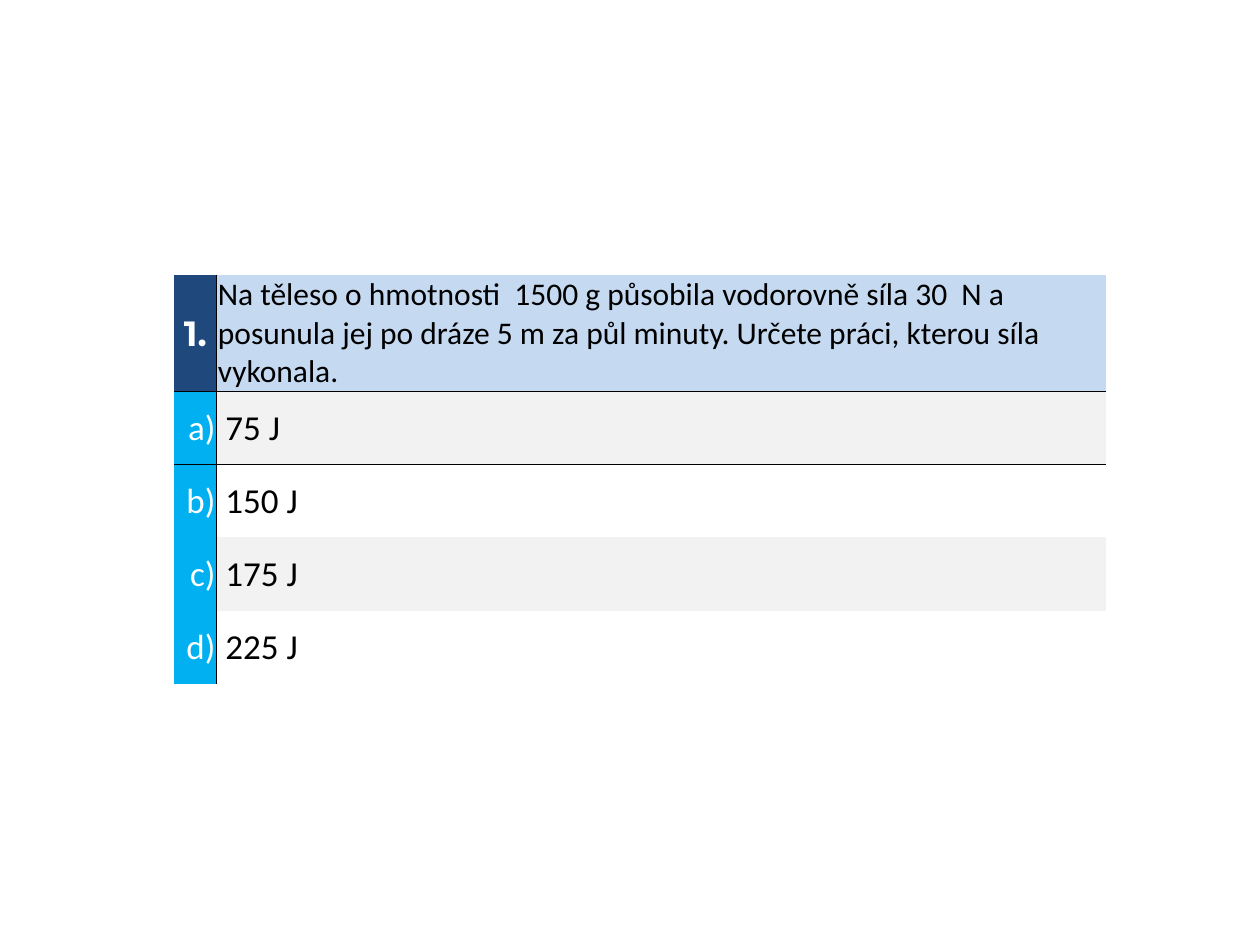
from dataclasses import dataclass

from lxml import etree
from pptx import Presentation
from pptx.dml.color import RGBColor
from pptx.enum.text import MSO_ANCHOR, PP_ALIGN
from pptx.oxml.ns import qn
from pptx.util import Inches, Pt

LEFT, CENTER, RIGHT = PP_ALIGN.LEFT, PP_ALIGN.CENTER, PP_ALIGN.RIGHT
MIDDLE = MSO_ANCHOR.MIDDLE
BLANK_LAYOUT = 6
NO_STYLE = "{2D5ABB26-0587-4C30-8999-92F81FD0307C}"

LEFT_EDGE, TOP_EDGE = 1.38, 2.18
COLUMNS = (0.34, 7.06)
QUESTION_HEIGHT, ANSWER_HEIGHT = 0.92, 0.58
INSET, ANSWER_INDENT = 0.01, 0.07

QUESTION = (
    "Na těleso o hmotnosti  1500 g působila vodorovně síla 30  N a posunula "
    "jej po dráze 5 m za půl minuty. Určete práci, kterou síla vykonala."
)
ANSWERS = (("a)", "75 J"), ("b)", "150 J"), ("c)", "175 J"), ("d)", "225 J"))


@dataclass(frozen=True)
class Theme:
    font: str = "Calibri"
    number_font: str = "Montserrat"
    question_size: int = 18
    answer_size: int = 20
    line_width: float = 0.5
    light: str = "FFFFFF"
    dark: str = "000000"
    number_fill: str = "1F497D"
    question_fill: str = "C5D9F1"
    label_fill: str = "00B0F0"
    band_fill: str = "F2F2F2"


THEME = Theme()


def fill_cell(cell, color):
    if color:
        cell.fill.solid()
        cell.fill.fore_color.rgb = RGBColor.from_string(color)
    else:
        cell.fill.background()


def add_borders(cell, sides):
    tc_pr = cell._tc.get_or_add_tcPr()
    for index, side in enumerate(sides):
        ln = etree.Element(qn(f"a:ln{side}"), w=str(Pt(THEME.line_width)))
        fill = etree.SubElement(ln, qn("a:solidFill"))
        etree.SubElement(fill, qn("a:srgbClr"), val=THEME.dark)
        tc_pr.insert(index, ln)


def write_cell(cell, text, color, size, align=LEFT, font=THEME.font,
               bold=False, fill=None, borders="", indent=INSET):
    cell.vertical_anchor = MIDDLE
    cell.margin_left = Inches(indent)
    cell.margin_right = cell.margin_top = Inches(INSET)
    cell.margin_bottom = 0
    p = cell.text_frame.paragraphs[0]
    p.text = text
    p.alignment = align
    r = p.runs[0]
    r.font.name = font
    r.font.size = Pt(size)
    r.font.bold = bold
    r.font.color.rgb = RGBColor.from_string(color)
    fill_cell(cell, fill)
    add_borders(cell, borders)


def add_quiz_table(s):
    heights = [QUESTION_HEIGHT] + [ANSWER_HEIGHT] * len(ANSWERS)
    frame = s.shapes.add_table(
        len(heights), len(COLUMNS), Inches(LEFT_EDGE), Inches(TOP_EDGE),
        Inches(sum(COLUMNS)), Inches(sum(heights)))
    table = frame.table
    table.first_row = table.horz_banding = False
    table._tbl.tblPr.find(qn("a:tableStyleId")).text = NO_STYLE
    for column, width in zip(table.columns, COLUMNS):
        column.width = Inches(width)
    for row, height in zip(table.rows, heights):
        row.height = Inches(height)
    return table


def write_question(table):
    write_cell(table.cell(0, 0), "1.", THEME.light, THEME.answer_size, CENTER,
               THEME.number_font, True, THEME.number_fill, "RB")
    write_cell(table.cell(0, 1), QUESTION, THEME.dark, THEME.question_size,
               fill=THEME.question_fill, borders="LB")


def write_answers(table):
    for row, (label, answer) in enumerate(ANSWERS, start=1):
        top = "T" if row == 1 else ""
        write_cell(table.cell(row, 0), label, THEME.light, THEME.answer_size,
                   RIGHT, fill=THEME.label_fill, borders="R" + top)
        write_cell(table.cell(row, 1), answer, THEME.dark, THEME.answer_size,
                   fill=THEME.band_fill if row % 2 else None,
                   borders="L" + top, indent=ANSWER_INDENT)


def main():
    prs = Presentation()
    prs.slide_width, prs.slide_height = Inches(10), Inches(7.5)
    s = prs.slides.add_slide(prs.slide_layouts[BLANK_LAYOUT])
    table = add_quiz_table(s)
    write_question(table)
    write_answers(table)
    prs.save("out.pptx")


if __name__ == "__main__":
    main()
